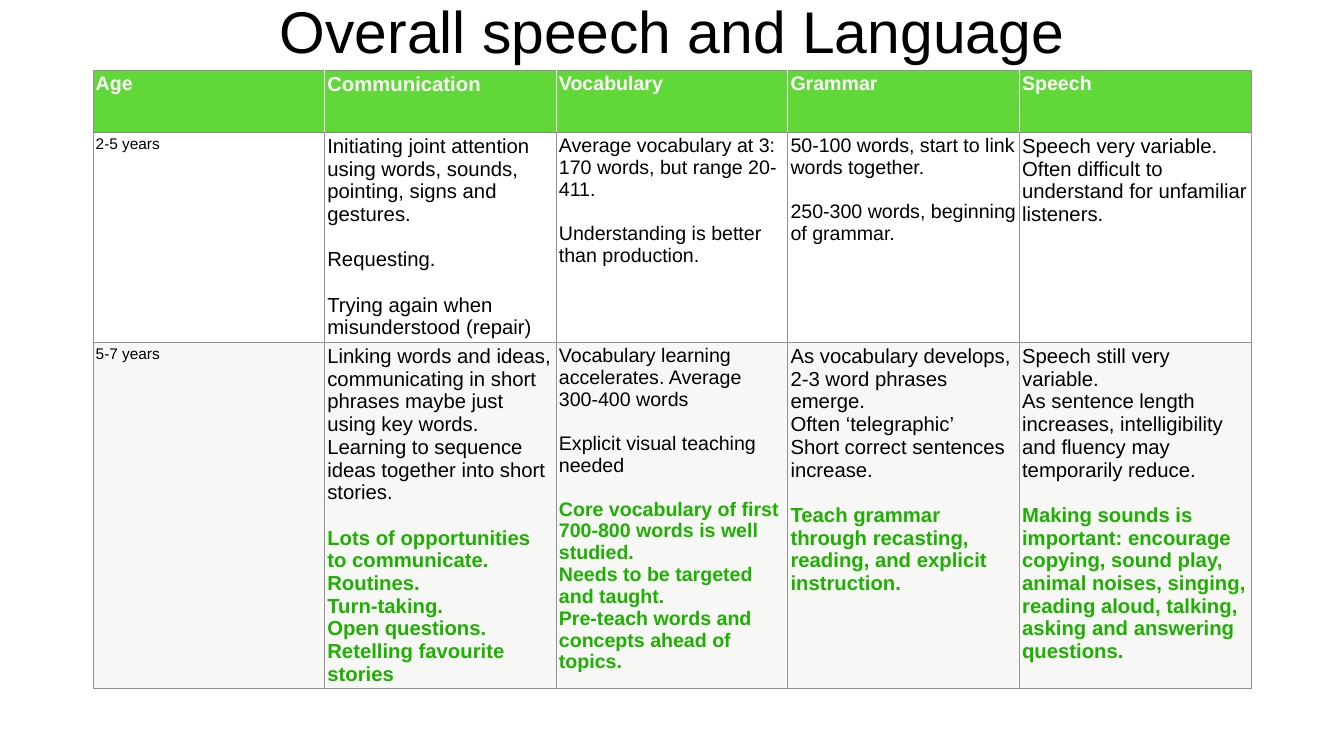
from dataclasses import dataclass

from lxml.etree import SubElement
from pptx import Presentation
from pptx.dml.color import RGBColor
from pptx.enum.text import MSO_ANCHOR, PP_ALIGN
from pptx.oxml.ns import qn
from pptx.util import Inches, Pt

COLORS = {
    "text": "000000", "white": "FFFFFF", "header": "60D837", "advice": "1EB001",
    "shade": "F7F7F6", "grid": "929292", "rule": "89847F",
}
FONT = "Arial"
LINE_HEIGHT = 1.117
INSET = 0.06
COLUMN_WIDTH = 4.596
ROW_HEIGHTS = (1.23, 4.17, 6.84)


@dataclass(frozen=True)
class Line:
    text: str
    color: str = "text"
    bold: bool = False
    gap: bool = False  # one line of space before the paragraph


@dataclass(frozen=True)
class Entry:
    size: int
    lines: tuple[Line, ...]


def heading(text: str, size: int = 28) -> Entry:
    return Entry(size, (Line(text, "white", True),))


def advice(text: str, gap: bool = False) -> Line:
    return Line(text, "advice", True, gap)


ROWS = (
    (heading("Age"), heading("Communication", 29), heading("Vocabulary"),
     heading("Grammar"), heading("Speech")),
    (
        Entry(22, (Line("2-5 years"),)),
        Entry(29, (
            Line("Initiating joint attention using words, sounds, pointing, signs and gestures."),
            Line("Requesting.", gap=True),
            Line("Trying again when misunderstood (repair)", gap=True),
        )),
        Entry(28, (
            Line("Average vocabulary at 3: 170 words, but range 20-411."),
            Line("Understanding is better than production.", gap=True),
        )),
        Entry(28, (
            Line("50-100 words, start to link words together."),
            Line("250-300 words, beginning of grammar.", gap=True),
        )),
        Entry(29, (
            Line("Speech very variable."),
            Line("Often difficult to understand for unfamiliar listeners."),
        )),
    ),
    (
        Entry(22, (Line("5-7 years"),)),
        Entry(29, (
            Line("Linking words and ideas, communicating in short phrases maybe just using key words."),
            Line("Learning to sequence ideas together into short stories."),
            advice("Lots of opportunities to communicate.", gap=True),
            advice("Routines."),
            advice("Turn-taking."),
            advice("Open questions."),
            advice("Retelling favourite stories"),
        )),
        Entry(28, (
            Line("Vocabulary learning accelerates. Average 300-400 words"),
            Line("Explicit visual teaching needed", gap=True),
            advice("Core vocabulary of first 700-800 words is well studied.", gap=True),
            advice("Needs to be targeted and taught."),
            advice("Pre-teach words and concepts ahead of topics."),
        )),
        Entry(29, (
            Line("As vocabulary develops, 2-3 word phrases emerge."),
            Line("Often ‘telegraphic’"),
            Line("Short correct sentences increase."),
            advice("Teach grammar through recasting, reading, and explicit instruction.", gap=True),
        )),
        Entry(29, (
            Line("Speech still very variable."),
            Line("As sentence length increases, intelligibility and fluency may temporarily reduce."),
            advice("Making sounds is important: encourage copying, sound play, animal noises, "
                   "singing, reading aloud, talking, asking and answering questions.", gap=True),
        )),
    ),
)


def add_span(para, text: str, size: int, color: str, bold: bool = False) -> None:
    span = para.add_run()
    span.text = text
    span.font.name = FONT
    span.font.size = Pt(size)
    span.font.bold = bold
    span.font.color.rgb = RGBColor.from_string(COLORS[color])


def set_insets(box) -> None:
    box.margin_left = box.margin_right = Inches(INSET)
    box.margin_top = box.margin_bottom = Inches(INSET)


def set_borders(cell, borders: dict[str, tuple[str, float]]) -> None:
    properties = cell._tc.get_or_add_tcPr()
    for index, side in enumerate("LRTB"):
        color, width = borders[side]
        line = SubElement(properties, qn(f"a:ln{side}"), w=str(Pt(width)))
        fill = SubElement(line, qn("a:solidFill"))
        SubElement(fill, qn("a:srgbClr"), val=COLORS[color])
        properties.insert(index, line)  # borders come before the fill


def borders_for(row: int, column: int, last_column: int) -> dict[str, tuple[str, float]]:
    borders = {side: ("grid", 0.25) for side in "LRTB"}
    if row == 0:
        borders["B"] = ("rule", 1)
        if column > 0:
            borders["L"] = ("white", 0.25)
        if column < last_column:
            borders["R"] = ("white", 0.25)
    elif row == 1:
        borders["T"] = ("rule", 1)
    return borders


def fill_cell(cell, entry: Entry, background: str) -> None:
    cell.fill.solid()
    cell.fill.fore_color.rgb = RGBColor.from_string(COLORS[background])
    cell.vertical_anchor = MSO_ANCHOR.TOP
    set_insets(cell)
    frame = cell.text_frame
    for index, line in enumerate(entry.lines):
        para = frame.add_paragraph() if index else frame.paragraphs[0]
        para.alignment = PP_ALIGN.LEFT
        if line.gap:
            para.space_before = Pt(round(entry.size * LINE_HEIGHT, 1))
        add_span(para, line.text, entry.size, line.color, line.bold)


def add_title(page, text: str) -> None:
    title = page.shapes.title
    title.left, title.top = Inches(1.85), Inches(-0.46)
    title.width, title.height = Inches(22.97), Inches(2.1)
    frame = title.text_frame
    frame.word_wrap = True
    frame.vertical_anchor = MSO_ANCHOR.MIDDLE
    set_insets(frame)
    para = frame.paragraphs[0]
    para.alignment = PP_ALIGN.CENTER
    add_span(para, text, 84, "text")


def add_stage_table(page) -> None:
    columns = len(ROWS[0])
    table = page.shapes.add_table(
        len(ROWS), columns, Inches(1.84), Inches(1.39),
        Inches(COLUMN_WIDTH * columns), Inches(sum(ROW_HEIGHTS))).table
    table.horz_banding = False
    for column in table.columns:
        column.width = Inches(COLUMN_WIDTH)
    for row, height in zip(table.rows, ROW_HEIGHTS):
        row.height = Inches(height)
    for row, (entries, background) in enumerate(zip(ROWS, ("header", "white", "shade"))):
        for column, entry in enumerate(entries):
            cell = table.cell(row, column)
            fill_cell(cell, entry, background)
            set_borders(cell, borders_for(row, column, columns - 1))


def main() -> None:
    deck = Presentation()
    deck.slide_width, deck.slide_height = Inches(26.67), Inches(15)
    page = deck.slides.add_slide(deck.slide_layouts[5])

    # Title
    add_title(page, "Overall speech and Language")
    # Development by age
    add_stage_table(page)

    deck.save("out.pptx")


if __name__ == "__main__":
    main()
